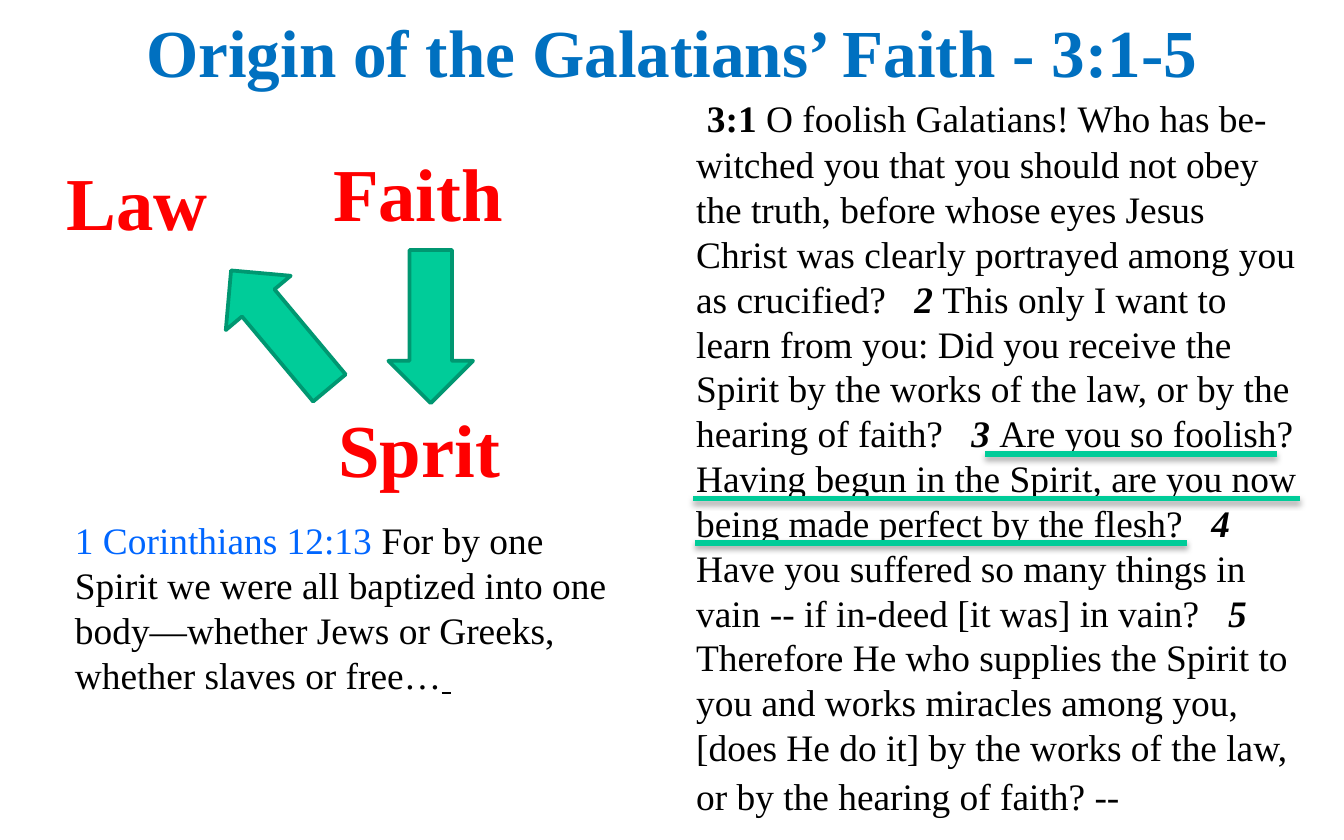
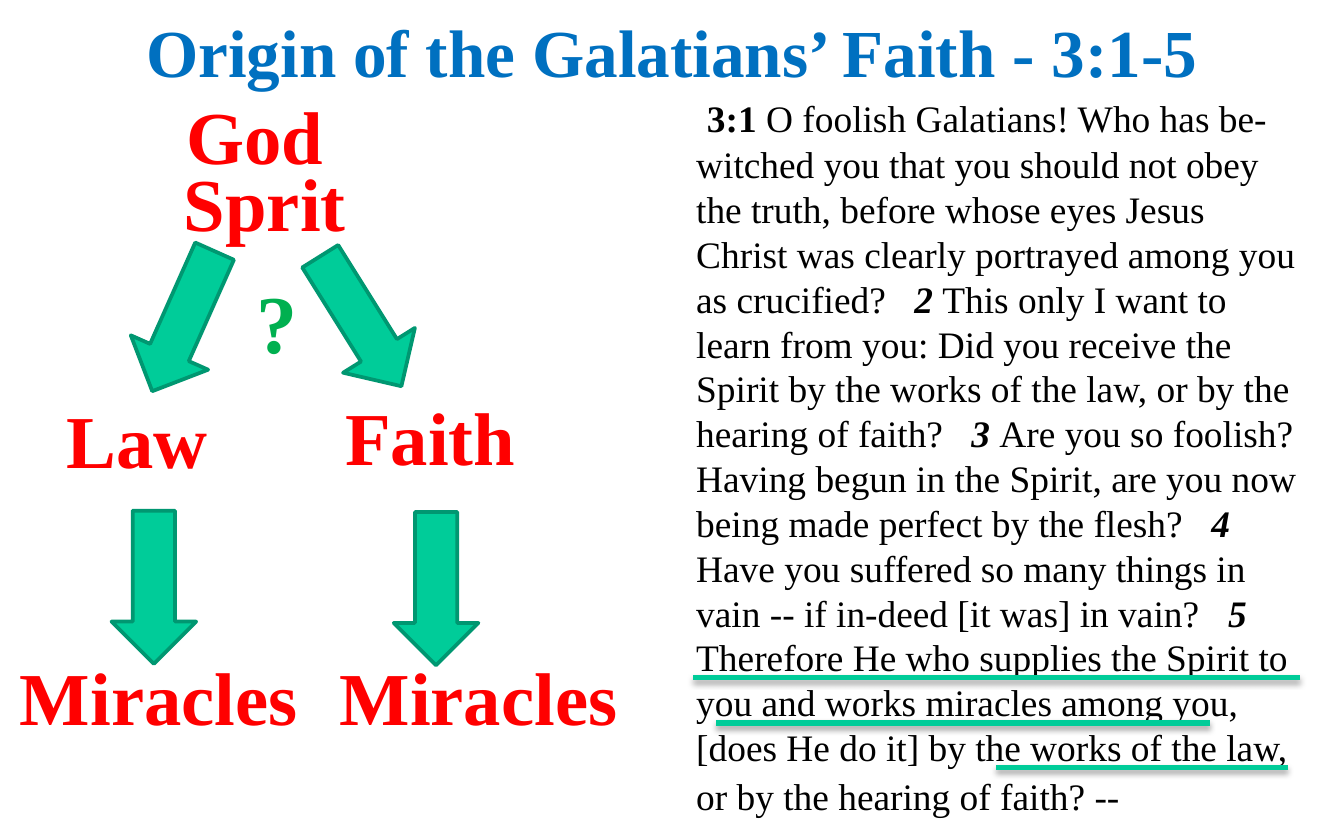
from dataclasses import dataclass

from lxml import etree
from pptx import Presentation
from pptx.dml.color import RGBColor
from pptx.enum.shapes import MSO_CONNECTOR, MSO_SHAPE
from pptx.enum.text import MSO_ANCHOR, MSO_AUTO_SIZE, PP_ALIGN
from pptx.oxml import parse_xml
from pptx.oxml.ns import nsdecls, qn
from pptx.util import Pt

DOWN_ARROW = MSO_SHAPE.DOWN_ARROW
STRAIGHT = MSO_CONNECTOR.STRAIGHT
MIDDLE = MSO_ANCHOR.MIDDLE
CENTER = PP_ALIGN.CENTER
NO_FIT = MSO_AUTO_SIZE.NONE
GROW = MSO_AUTO_SIZE.SHAPE_TO_FIT_TEXT

PX = 9144  # EMU per px, 100 px to the inch
ARROW_WIDTH, ARROW_HEIGHT = 63, 114
LABEL_HEIGHT = 77


@dataclass(frozen=True)
class Theme:
    font: str = "Times New Roman"
    title: str = "0070C0"
    text: str = "000000"
    label: str = "FF0000"
    question: str = "00B050"
    reference: str = "0066FF"
    accent: str = "00CC99"
    accent_edge: str = "009771"
    title_size: int = 36
    label_size: int = 40
    question_size: int = 44
    text_size: int = 20
    lead_size: int = 23
    tail_size: int = 22


THEME = Theme()

# Shared wording
TITLE = "Origin of the Galatians’ Faith - 3:1-5"
OPENING = (" O foolish Galatians! Who has be-witched you that you should not obey "
           "the truth, before whose eyes Jesus Christ was clearly portrayed among "
           "you as crucified?   ")
VERSES = (
    ("2 ", "This only I want to learn from you: Did you receive the Spirit by the "
           "works of the law, or by the hearing of faith?   "),
    ("3 ", "Are you so foolish? Having begun in the Spirit, are you now being made "
           "perfect by the flesh?   "),
    ("4 ", "Have you suffered so many things in vain -- if in-deed [it was] in "
           "vain?   "),
    ("5 ", "Therefore He who supplies the Spirit to you and works miracles among "
           "you, [does He do it] by the works of the law, or by the hearing of "
           "faith? --  "),
)


def px(*lengths):
    return [length * PX for length in lengths]


def add_span(para, text, size=THEME.text_size, color=THEME.text,
             bold=False, italic=False, underline=False):
    span = para.add_run()
    span.text = text
    font = span.font
    font.name, font.size = THEME.font, Pt(size)
    font.bold, font.italic, font.underline = bold, italic, underline
    font.color.rgb = RGBColor.from_string(color)


def move(box, left, top, width, height):
    box.left, box.top, box.width, box.height = px(left, top, width, height)


def fill_title(page):
    box = page.shapes.title
    move(box, 75, 0, 850, 76)
    frame = box.text_frame
    frame.auto_size, frame.vertical_anchor = NO_FIT, MIDDLE
    para = frame.paragraphs[0]
    para.alignment = CENTER
    add_span(para, TITLE, size=THEME.title_size, color=THEME.title, bold=True)


def fill_passage(page):
    box = page.placeholders[1]
    move(box, 508, 62, 467, 507)
    frame = box.text_frame
    frame.auto_size = NO_FIT
    para = frame.paragraphs[0]
    # Running text: no bullet and no hanging indent
    properties = para._p.get_or_add_pPr()
    properties.set("marL", "0")
    properties.set("indent", "0")
    etree.SubElement(properties, qn("a:buNone"))

    add_span(para, " ", size=THEME.lead_size)
    add_span(para, "3:1", bold=True)
    add_span(para, OPENING)
    for number, verse in VERSES:
        add_span(para, number, bold=True, italic=True)
        add_span(para, verse)
    add_span(para, " ", size=THEME.tail_size)


def add_text_box(page, left, top, width, height):
    box = page.shapes.add_textbox(*px(left, top, width, height))
    box.text_frame.word_wrap = True
    box.text_frame.auto_size = GROW
    return box.text_frame.paragraphs[0]


def add_label(page, text, left, top, width, height=LABEL_HEIGHT,
              size=THEME.label_size, color=THEME.label):
    para = add_text_box(page, left, top, width, height)
    add_span(para, text, size=size, color=color, bold=True)


def add_arrow(page, left, top, rotation=0):
    arrow = page.shapes.add_shape(
        DOWN_ARROW, *px(left, top, ARROW_WIDTH, ARROW_HEIGHT))
    arrow.rotation = rotation
    arrow.shadow.inherit = False
    arrow.fill.solid()
    arrow.fill.fore_color.rgb = RGBColor.from_string(THEME.accent)
    arrow.line.color.rgb = RGBColor.from_string(THEME.accent_edge)
    arrow.line.width = Pt(2)


def add_underline(page, left, right, top):
    line = page.shapes.add_connector(STRAIGHT, *px(left, top, right, top))
    line.line.color.rgb = RGBColor.from_string(THEME.accent)
    line.line.width = Pt(3)
    # Soft shadow straight below the line
    line._element.spPr.append(parse_xml(
        f'<a:effectLst {nsdecls("a")}>'
        '<a:outerShdw blurRad="40000" dist="23000" dir="5400000" rotWithShape="0">'
        f'<a:srgbClr val="{THEME.text}"><a:alpha val="35000"/></a:srgbClr>'
        '</a:outerShdw></a:effectLst>'))


def add_page(deck):
    page = deck.slides.add_slide(deck.slide_layouts[1])
    fill_title(page)
    fill_passage(page)
    return page


def build_faith_page(deck):
    page = add_page(deck)
    # From faith to the Spirit, and back to law
    add_arrow(page, 177, 188, rotation=140.1)
    add_arrow(page, 289, 186)
    add_label(page, "Law", 40, 111, 133)
    add_label(page, "Sprit", 242, 295, 142)
    add_label(page, "Faith", 238, 104, 165)
    # Verse 3
    for left, right, top in ((733, 950, 338), (516, 967, 371), (517, 883, 404)):
        add_underline(page, left, right, top)
    # Supporting verse
    para = add_text_box(page, 46, 380, 433, 145)
    add_span(para, "1 Corinthians 12:13 ", color=THEME.reference)
    add_span(para, "For by one Spirit we were all baptized into one body—whether "
                   "Jews or Greeks, whether slaves or free…")
    add_span(para, " ", underline=True)


def build_miracles_page(deck):
    page = add_page(deck)
    # Verse 5
    for left, right, top in ((516, 967, 504), (533, 900, 538), (741, 958, 571)):
        add_underline(page, left, right, top)
    # Two paths down from God
    for left, top, rotation in ((105, 182, 24), (237, 182, 328),
                                (83, 380, 0), (293, 381, 0)):
        add_arrow(page, left, top, rotation)
    for text, left, top, width in (("God", 129, 62, 142), ("Sprit", 127, 112, 142),
                                   ("Law", 40, 288, 133), ("Faith", 247, 286, 162),
                                   ("Miracles", 5, 479, 245),
                                   ("Miracles", 243, 479, 245)):
        add_label(page, text, left, top, width)
    add_label(page, "?", 181, 197, 65, height=84,
              size=THEME.question_size, color=THEME.question)


def main():
    deck = Presentation()
    deck.slide_width, deck.slide_height = px(1000, 625)
    build_faith_page(deck)
    build_miracles_page(deck)
    deck.save("out.pptx")


if __name__ == "__main__":
    main()
